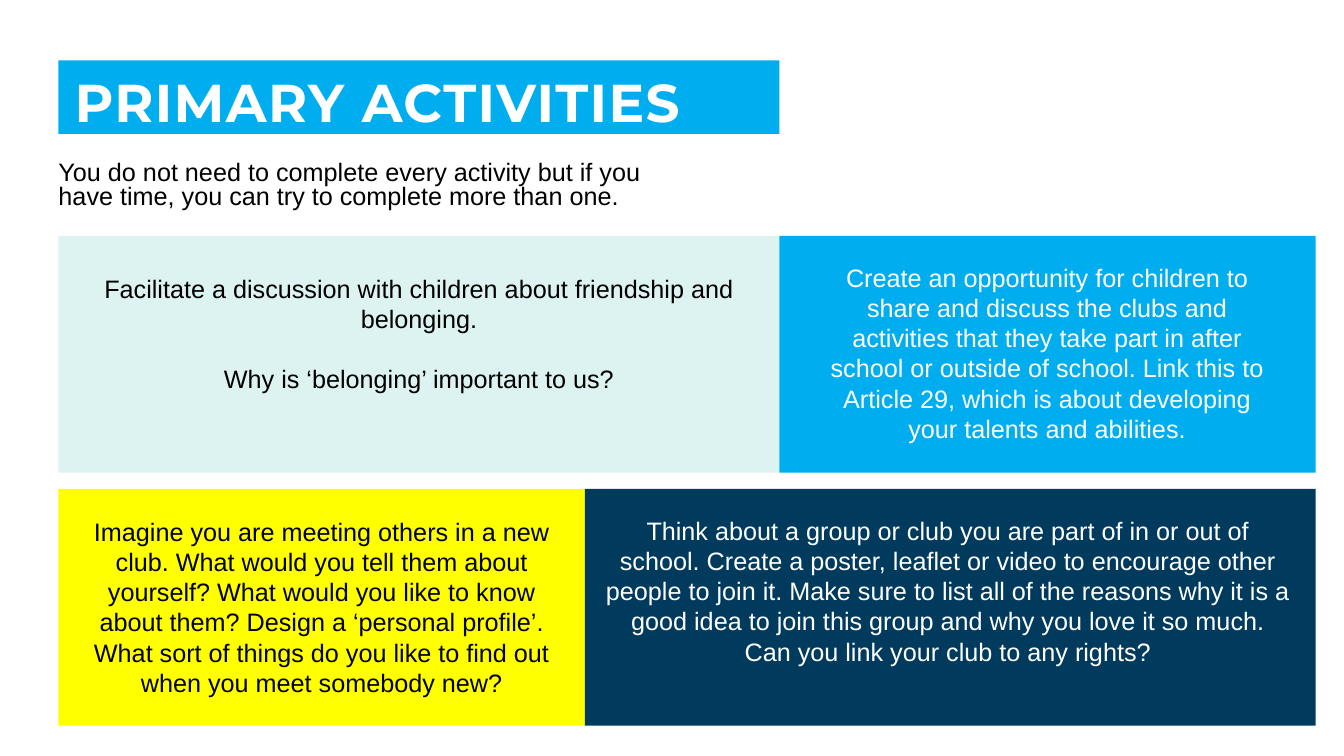
from pptx import Presentation
from pptx.dml.color import RGBColor
from pptx.enum.shapes import MSO_SHAPE
from pptx.enum.text import MSO_ANCHOR, PP_ALIGN
from pptx.util import Inches, Pt

BLUE, NAVY, YELLOW, MINT = "00AEEF", "003B5E", "FFFF00", "DDF3F1"
WHITE, BLACK = "FFFFFF", "000000"
LEFT, RIGHT, TOP_SPLIT, BOTTOM_SPLIT = 0.58, 13.05, 7.73, 5.8
ROW_1, ROW_2, ROW_H = 2.34, 4.85, 2.35


def add_panel(x, y, w, h, color):
    sp = slide.shapes.add_shape(
        MSO_SHAPE.RECTANGLE, Inches(x), Inches(y), Inches(w), Inches(h))
    sp.shadow.inherit = False
    sp.fill.solid()
    sp.fill.fore_color.rgb = RGBColor.from_string(color)
    sp.line.fill.background()
    return sp


def write(tf, texts, color, align, size=18, font="Arial"):
    tf.word_wrap = True
    for i, text in enumerate(texts):
        p = tf.add_paragraph() if i else tf.paragraphs[0]
        p.text = text
        p.alignment = align
        p.font.size = Pt(size)
        p.font.name = font
        p.font.color.rgb = RGBColor.from_string(color)
        if i:
            p.space_before = Pt(21.6)


prs = Presentation()
prs.slide_width, prs.slide_height = Inches(13.33), Inches(7.5)
slide = prs.slides.add_slide(prs.slide_layouts[6])

title = add_panel(LEFT, 0.6, TOP_SPLIT - LEFT, 0.73, BLUE)
tf = title.text_frame
tf.margin_left, tf.margin_top = Inches(0.16), Inches(0.16)
tf.margin_right, tf.margin_bottom = Inches(0.12), Inches(0)
tf.vertical_anchor = MSO_ANCHOR.MIDDLE
write(tf, ["PRIMARY ACTIVITIES"], WHITE, PP_ALIGN.LEFT, 38, "Montserrat")
p = tf.paragraphs[0]
p.line_spacing = 0.9
p.font.bold = True
p.runs[0].font._element.set("spc", "100")

intro = slide.shapes.add_textbox(Inches(LEFT), Inches(1.56), Inches(6.21), Inches(0.62))
tf = intro.text_frame
tf.margin_left = Inches(0)
write(tf, ["You do not need to complete every activity but if you have time, "
           "you can try to complete more than one."], BLACK, PP_ALIGN.LEFT)
tf.paragraphs[0].line_spacing = 0.8

activities = [
    (LEFT, ROW_1, TOP_SPLIT, MINT, BLACK, (0.69, 2.66, 6.93, 1.31),
     ["Facilitate a discussion with children about friendship and belonging.",
      "Why is ‘belonging’ important to us?"]),
    (LEFT, ROW_2, BOTTOM_SPLIT, YELLOW, BLACK, (0.69, 5.07, 5, 2.22),
     ["Imagine you are meeting others in a new club. What would you tell them "
      "about yourself? What would you like to know about them? Design a "
      "‘personal profile’. What sort of things do you like to find out when "
      "you meet somebody new?"]),
    (TOP_SPLIT, ROW_1, RIGHT, BLUE, WHITE, (8.03, 2.55, 4.71, 1.92),
     ["Create an opportunity for children to share and discuss the clubs and "
      "activities that they take part in after school or outside of school. "
      "Link this to Article 29, which is about developing your talents and "
      "abilities."]),
    (BOTTOM_SPLIT, ROW_2, RIGHT, NAVY, WHITE, (5.91, 5.06, 6.98, 1.92),
     ["Think about a group or club you are part of in or out of school. Create "
      "a poster, leaflet or video to encourage other people to join it. Make "
      "sure to list all of the reasons why it is a good idea to join this "
      "group and why you love it so much. Can you link your club to any rights?"]),
]
for left, top, right, fill, color, box, texts in activities:
    add_panel(left, top, right - left, ROW_H, fill)
    sp = slide.shapes.add_textbox(*[Inches(v) for v in box])
    write(sp.text_frame, texts, color, PP_ALIGN.CENTER)

prs.save("out.pptx")
